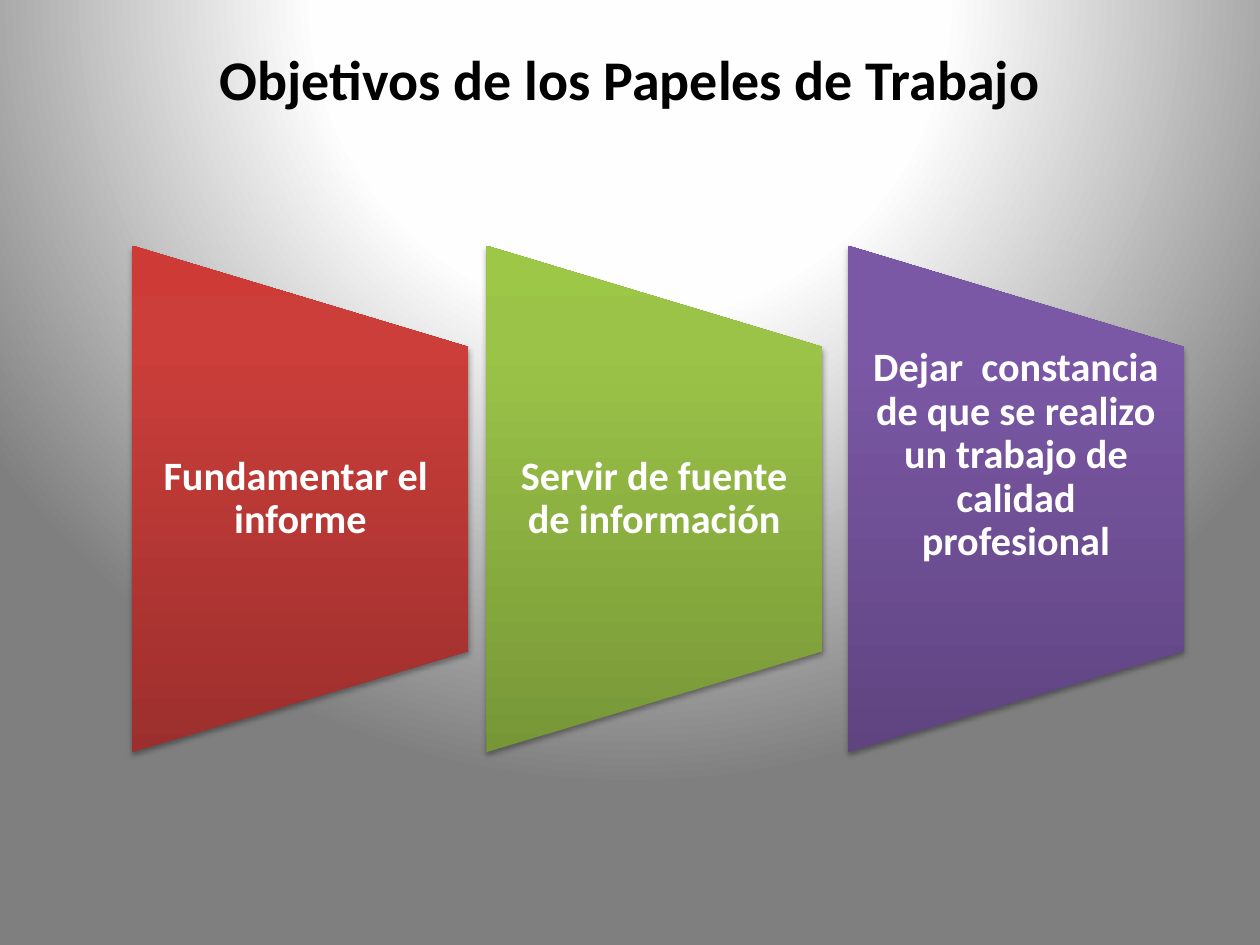
from lxml import etree
from pptx import Presentation
from pptx.dml.color import RGBColor
from pptx.enum.shapes import MSO_SHAPE
from pptx.enum.text import MSO_ANCHOR, PP_ALIGN
from pptx.oxml.ns import qn
from pptx.util import Inches, Pt

TRAPEZOID = MSO_SHAPE.FLOWCHART_MANUAL_OPERATION
TOP, MIDDLE = MSO_ANCHOR.TOP, MSO_ANCHOR.MIDDLE
CENTER = PP_ALIGN.CENTER
A = "http://schemas.openxmlformats.org/drawingml/2006/main"

THEME = {
    "font": "Calibri",
    "title_size": 32,
    "label_size": 23,
    "title": "000000",
    "label": "FFFFFF",
    "background": [(0, "FFFFFF"), (40, "FEFEFE"), (100, "7F7F7F")],
    "red": [(0, "9C2F2D"), (80, "CB3E3A"), (100, "CE3B37")],
    "green": [(0, "779737"), (80, "9BC348"), (100, "9DC746")],
    "purple": [(0, "5F4480"), (80, "7B58A6"), (100, "7C57A8")],
}
UPWARD = '<a:lin ang="16200000" scaled="0"/>'
SPOTLIGHT = ('<a:path path="circle"><a:fillToRect l="50000" t="-80000" '
             'r="50000" b="180000"/></a:path>')
SHADOW = (f'<a:outerShdw xmlns:a="{A}" blurRad="40000" dist="23000" dir="5400000" '
          'rotWithShape="0"><a:srgbClr val="000000"><a:alpha val="35000"/>'
          '</a:srgbClr></a:outerShdw>')


def paint_gradient(fill, owner, stops, direction):
    fill.gradient()
    plain = owner.find(".//" + qn("a:gradFill"))
    marks = "".join(f'<a:gs pos="{pos * 1000}"><a:srgbClr val="{color}"/></a:gs>'
                    for pos, color in stops)
    plain.getparent().replace(plain, etree.fromstring(
        f'<a:gradFill xmlns:a="{A}" rotWithShape="0">'
        f'<a:gsLst>{marks}</a:gsLst>{direction}</a:gradFill>'))


def write(frame, text, *, size, color, anchor, spacing=1.0, side=0.1, edge=0.05):
    frame.word_wrap = True
    frame.vertical_anchor = anchor
    frame.margin_left = frame.margin_right = Inches(side)
    frame.margin_top = frame.margin_bottom = Inches(edge)
    paragraph = frame.paragraphs[0]
    paragraph.alignment = CENTER
    paragraph.line_spacing = spacing
    run = paragraph.add_run()
    run.text = text
    run.font.name = THEME["font"]
    run.font.size = Pt(size)
    run.font.bold = True
    run.font.color.rgb = RGBColor.from_string(color)


prs = Presentation()
prs.slide_width, prs.slide_height = Inches(10), Inches(7.5)
W, H = prs.slide_width, prs.slide_height
slide = prs.slides.add_slide(prs.slide_layouts[5])
paint_gradient(slide.background.fill, slide.element, THEME["background"], SPOTLIGHT)

heading = slide.shapes.title
heading.left, heading.top = int(W * 0.05), int(H * 0.04)
heading.width, heading.height = int(W * 0.9), Inches(1.25)
write(heading.text_frame, "Objetivos de los Papeles de Trabajo",
      size=THEME["title_size"], color=THEME["title"], anchor=TOP)

panel_width, panel_height = Inches(2.67), Inches(4.02)
panel_middle = Inches(3.96)
label_height = int(panel_height * 0.6)

objectives = [
    (0.105, "Fundamentar el  informe", "red", MIDDLE),
    (0.386, "Servir de fuente de información", "green", MIDDLE),
    (0.673, "Dejar  constancia de que se realizo un trabajo de calidad profesional",
     "purple", TOP),
]
for column, objective, palette, anchor in objectives:
    left = int(W * column)
    panel = slide.shapes.add_shape(
        TRAPEZOID, left - (panel_height - panel_width) // 2,
        panel_middle - panel_width // 2, panel_height, panel_width)
    panel.rotation = 270
    panel.line.fill.background()
    paint_gradient(panel.fill, panel.element, THEME[palette], UPWARD)
    panel.shadow.inherit = False
    panel.element.find(".//" + qn("a:effectLst")).append(etree.fromstring(SHADOW))

    label = slide.shapes.add_textbox(
        left, panel_middle - label_height // 2, panel_width, label_height)
    write(label.text_frame, objective, size=THEME["label_size"], color=THEME["label"],
          anchor=anchor, spacing=0.9, side=0.16, edge=0)

prs.save("out.pptx")
